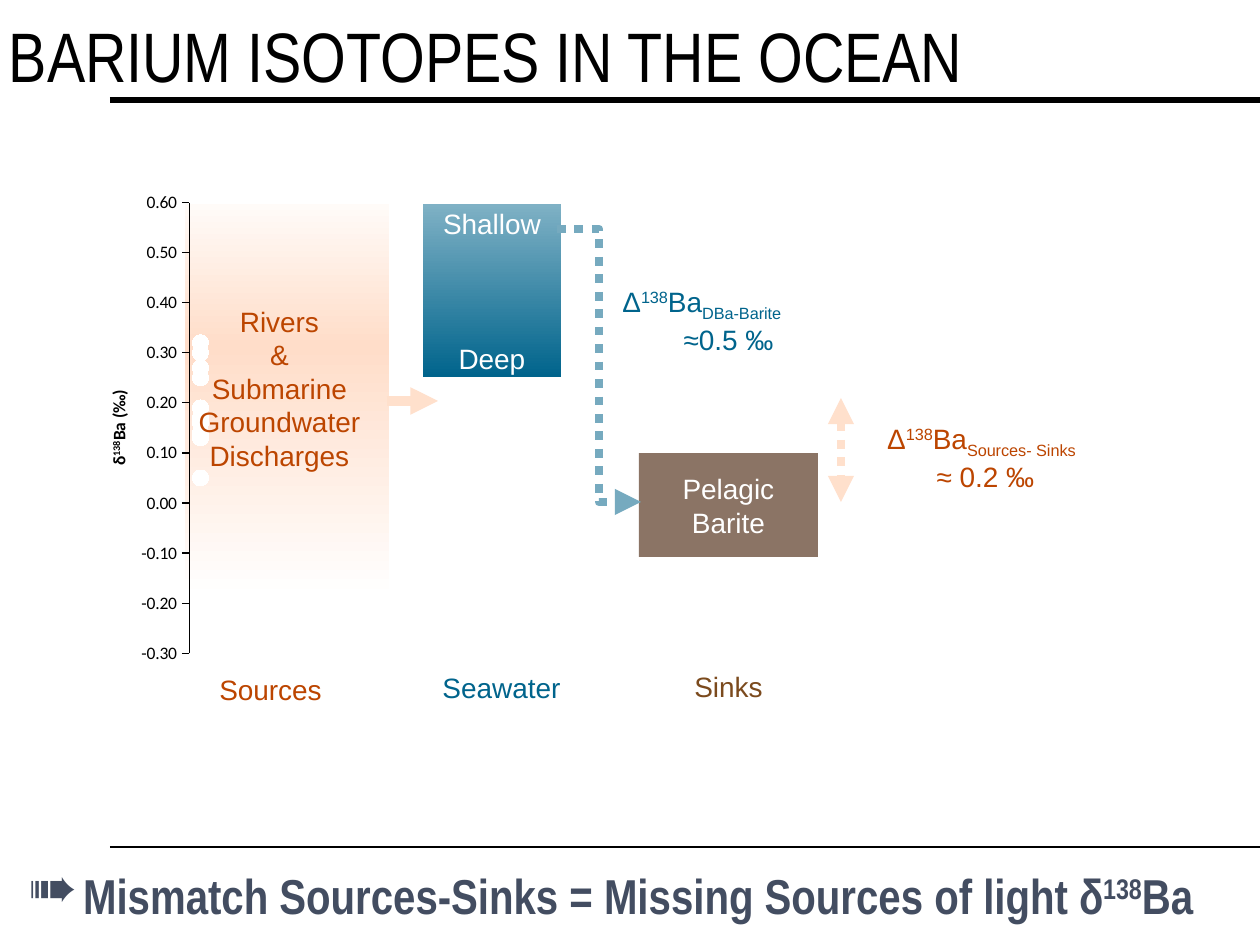
from lxml import etree
from pptx import Presentation
from pptx.chart.data import XyChartData
from pptx.dml.color import RGBColor
from pptx.enum.chart import XL_CHART_TYPE, XL_MARKER_STYLE, XL_TICK_MARK
from pptx.enum.dml import MSO_LINE
from pptx.enum.shapes import MSO_CONNECTOR, MSO_SHAPE
from pptx.enum.text import MSO_ANCHOR, PP_ALIGN
from pptx.oxml.ns import qn
from pptx.util import Pt

EMU_PER_PX = 914400 / 126
LEFT, CENTER = PP_ALIGN.LEFT, PP_ALIGN.CENTER
TOP, MIDDLE = MSO_ANCHOR.TOP, MSO_ANCHOR.MIDDLE
STRAIGHT, ELBOW = MSO_CONNECTOR.STRAIGHT, MSO_CONNECTOR.ELBOW
DOTTED = MSO_LINE.ROUND_DOT
SUPER, SUB = 30000, -25000

BLACK, WHITE, SLATE = "000000", "FFFFFF", "434D61"
RUST, PEACH, BROWN = "BC4500", "FFE0CC", "7B4A1D"
OCEAN, PALE_OCEAN, BARITE = "00648C", "76AABF", "8B7465"
SAMPLES = [0.19, 0.14, 0.16, 0.17, 0.25, 0.13, 0.32, 0.30, 0.27, 0.05]


def px(value):
    return round(value * EMU_PER_PX)


def box(*lengths):
    return [px(length) for length in lengths]


def rgb(color):
    return RGBColor.from_string(color)


def style_font(font, size, color, name="Arial", bold=False):
    font.size, font.name, font.bold = Pt(size), name, bold
    font.color.rgb = rgb(color)


def add_runs(paragraph, pieces):
    """Add runs; a piece is a string or a (string, baseline shift) pair."""
    for piece in pieces:
        text, shift = (piece, 0) if isinstance(piece, str) else piece
        run = paragraph.add_run()
        run.text = text
        if shift:
            run._r.get_or_add_rPr().set("baseline", str(shift))


def fill_text(shape, lines, color, size=16, name="Arial", bold=False,
              aligns=None, anchor=TOP):
    """Write one paragraph for each list of pieces in lines."""
    frame = shape.text_frame
    frame.word_wrap = True
    frame.vertical_anchor = anchor
    for index, pieces in enumerate(lines):
        paragraph = frame.add_paragraph() if index else frame.paragraphs[0]
        paragraph.alignment = aligns[index] if aligns else CENTER
        style_font(paragraph.font, size, color, name, bold)
        add_runs(paragraph, pieces)
    return frame


def add_label(slide, bounds, lines, color, **options):
    shape = slide.shapes.add_textbox(*box(*bounds))
    return fill_text(shape, lines, color, **options)


def add_block(slide, bounds, color=None, stops=()):
    """Add a rectangle with a plain fill or a top-to-bottom gradient."""
    shape = slide.shapes.add_shape(MSO_SHAPE.RECTANGLE, *box(*bounds))
    shape.shadow.inherit = False
    shape.line.fill.background()
    if color:
        shape.fill.solid()
        shape.fill.fore_color.rgb = rgb(color)
        return shape
    shape.fill.gradient()
    shape.fill.gradient_angle = 270
    stop_list = shape._element.spPr.find(".//" + qn("a:gsLst"))
    for old_stop in list(stop_list):
        stop_list.remove(old_stop)
    for percent, stop_color in stops:
        stop = etree.SubElement(stop_list, qn("a:gs"), pos=str(percent * 1000))
        etree.SubElement(stop, qn("a:srgbClr"), val=stop_color)
    return shape


def add_line(slide, ends, color, width, kind=STRAIGHT, dash=None, arrows=()):
    connector = slide.shapes.add_connector(kind, *box(*ends))
    connector.line.color.rgb = rgb(color)
    connector.line.width = Pt(width)
    if dash:
        connector.line.dash_style = dash
    for end in arrows:
        etree.SubElement(connector.line._get_or_add_ln(), qn(end), type="triangle")
    etree.SubElement(connector._element.spPr, qn("a:effectLst"))


def set_plot_area(chart, **fractions):
    """Fix the inner plot area as fractions of the chart."""
    plot_area = chart._chartSpace.find(".//" + qn("c:plotArea"))
    layout = plot_area.find(qn("c:layout"))
    if layout is None:
        layout = etree.Element(qn("c:layout"))
        plot_area.insert(0, layout)
    manual = etree.SubElement(layout, qn("c:manualLayout"))
    settings = {"layoutTarget": "inner", "xMode": "edge", "yMode": "edge", **fractions}
    for key, value in settings.items():
        etree.SubElement(manual, qn("c:" + key), val=str(value))


def add_isotope_chart(slide):
    data = XyChartData()
    series_data = data.add_series("Series 1")
    for value in SAMPLES:
        series_data.add_data_point(1.5, value)
    chart = slide.shapes.add_chart(
        XL_CHART_TYPE.XY_SCATTER, *box(82, 183, 290, 490), data).chart
    chart.has_legend = chart.has_title = False
    style_font(chart.font, 10, BLACK, "Calibri")
    set_plot_area(chart, x=0.37, y=0.04, w=0.5, h=0.92)

    horizontal, vertical = chart.category_axis, chart.value_axis
    horizontal.visible = False
    horizontal.has_major_gridlines = vertical.has_major_gridlines = False
    horizontal.minimum_scale, horizontal.maximum_scale = 1.4, 2.7
    vertical.minimum_scale, vertical.maximum_scale = -0.3, 0.6
    vertical.major_unit = 0.1
    vertical.major_tick_mark = XL_TICK_MARK.OUTSIDE
    vertical.tick_labels.number_format = "0.00"
    vertical.tick_labels.number_format_is_linked = False
    vertical.format.line.color.rgb = rgb(BLACK)
    vertical.format.line.width = Pt(0.75)
    title = vertical.axis_title.text_frame.paragraphs[0]
    style_font(title.font, 10, BLACK, "Calibri", bold=True)
    add_runs(title, ["δ", ("138", SUPER), "Ba (‰)"])

    series = chart.plots[0].series[0]
    series.format.line.fill.background()
    series.marker.style, series.marker.size = XL_MARKER_STYLE.CIRCLE, 9
    series.marker.format.fill.solid()
    series.marker.format.fill.fore_color.rgb = rgb(WHITE)
    series.marker.format.line.fill.background()


def add_heading(slide):
    frame = add_label(slide, (0, 0, 1260, 164), [["BARIUM ISOTOPES IN THE OCEAN"]],
                      BLACK, size=40, name="Arial Narrow", aligns=[LEFT])
    frame.margin_left, frame.margin_top = px(9), px(13)


def add_conclusion(slide):
    pieces = ["Mismatch Sources-Sinks = Missing Sources of light δ", ("138", SUPER), "Ba"]
    frame = add_label(slide, (-47, 844, 1307, 101), [pieces], SLATE, size=28,
                      name="Arial Narrow", bold=True, anchor=MIDDLE)
    frame.margin_right = px(33)
    properties = frame.paragraphs[0]._p.get_or_add_pPr()
    properties.set("marL", str(px(84)))
    properties.set("indent", str(px(-55)))
    bullet_color = etree.Element(qn("a:buClr"))
    etree.SubElement(bullet_color, qn("a:srgbClr"), val=SLATE)
    bullet_size = etree.Element(qn("a:buSzPct"), val="120000")
    bullet = etree.Element(qn("a:buChar"), char="➠")
    for index, element in enumerate((bullet_color, bullet_size, bullet)):
        properties.insert(index, element)


def add_difference(slide, bounds, subscript, value, color, first_align):
    name = ["Δ", ("138", SUPER), "Ba", (subscript, SUB)]
    add_label(slide, bounds, [name, [value]], color, aligns=[first_align, CENTER])


def main():
    presentation = Presentation()
    presentation.slide_width, presentation.slide_height = box(1260, 945)
    slide = presentation.slides.add_slide(presentation.slide_layouts[6])

    add_line(slide, (110, 100, 1570, 100), BLACK, 3.5)
    add_line(slide, (110, 847, 1570, 847), BLACK, 1)
    add_heading(slide)
    add_conclusion(slide)

    add_block(slide, (185, 204, 204, 394),
              stops=[(0, "FFFBF8"), (36, "FFDDC9"), (100, WHITE)])
    add_isotope_chart(slide)
    barite = add_block(slide, (639, 453, 179, 104), BARITE)
    fill_text(barite, [["Pelagic Barite"]], WHITE, anchor=MIDDLE)
    add_line(slide, (387, 401, 438, 401), PEACH, 5.25, arrows=["a:tailEnd"])
    seawater = add_block(slide, (423, 204, 138, 173), stops=[(0, "7FB1C5"), (100, OCEAN)])
    depths = fill_text(seawater, [["Shallow"], ["Deep"]], WHITE, anchor=MIDDLE)
    depths.paragraphs[1].space_before = Pt(58)

    add_label(slide, (185, 298, 189, 183),
              [["Rivers"], ["&"], ["Submarine Groundwater Discharges"]], RUST)
    add_difference(slide, (610, 278, 237, 115), "DBa-Barite", "≈0.5 ‰", OCEAN, LEFT)
    add_difference(slide, (863, 415, 237, 115), "Sources- Sinks", " ≈ 0.2 ‰", RUST, CENTER)
    add_line(slide, (841, 398, 841, 502), PEACH, 5, dash=DOTTED,
             arrows=["a:headEnd", "a:tailEnd"])
    add_line(slide, (557, 229, 641, 502), PALE_OCEAN, 5, kind=ELBOW, dash=DOTTED,
             arrows=["a:tailEnd"])
    for text, bounds, color in (("Sinks", (639, 663, 179, 47), BROWN),
                                ("Seawater", (421, 664, 161, 47), OCEAN),
                                ("Sources", (176, 666, 189, 47), RUST)):
        add_label(slide, bounds, [[text]], color)
    presentation.save("out.pptx")


if __name__ == "__main__":
    main()
